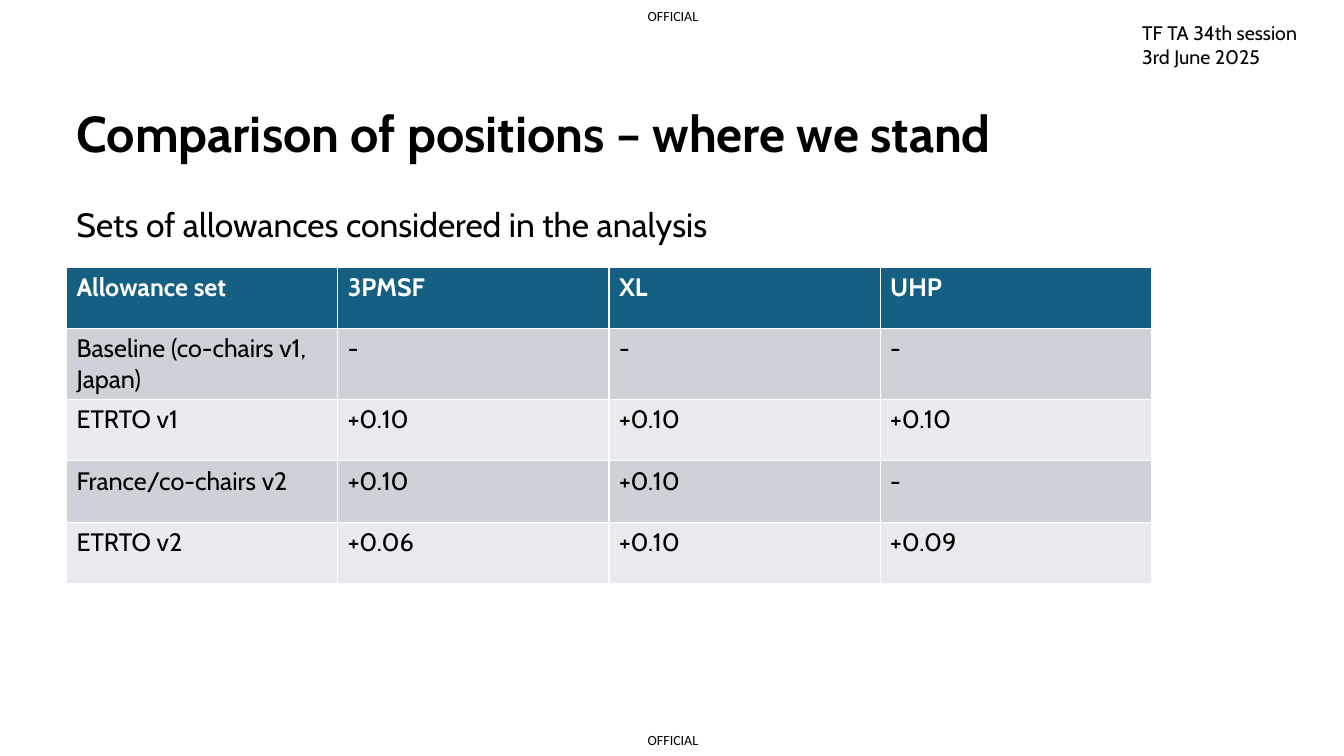
"""Build the slide that compares tyre allowance positions."""
from pptx import Presentation
from pptx.dml.color import RGBColor
from pptx.enum.text import MSO_ANCHOR, MSO_AUTO_SIZE, PP_ALIGN
from pptx.util import Inches, Pt

TOP = MSO_ANCHOR.TOP
NO_FIT = MSO_AUTO_SIZE.NONE
LEFT = PP_ALIGN.LEFT
CENTER = PP_ALIGN.CENTER
TITLE_ONLY = 5

COLORS = {
    "text": "000000",
    "header_text": "FFFFFF",
    "header": "156082",
    "odd_row": "CCD2D8",
    "even_row": "E8EAED",
}
TITLE_FONT = {"name": "Cabin", "size": Pt(36), "bold": True}
SUBTITLE_FONT = {"name": "Cabin", "size": Pt(24), "bold": False}
SESSION_FONT = {"name": "Cabin", "size": Pt(14), "bold": False}
MARKING_FONT = {"name": "Calibri", "size": Pt(10), "bold": False}
HEADER_FONT = {"name": "Cabin", "size": Pt(18), "bold": True}
CELL_FONT = {**HEADER_FONT, "bold": False}

ALLOWANCES = [
    ["Allowance set", "3PMSF", "XL", "UHP"],
    ["Baseline (co-chairs v1, Japan)", "-", "-", "-"],
    ["ETRTO v1", "+0.10", "+0.10", "+0.10"],
    ["France/co-chairs v2", "+0.10", "+0.10", "-"],
    ["ETRTO v2", "+0.06", "+0.10", "+0.09"],
]
COLUMN_WIDTH = 2.69
ROW_HEIGHT = 0.61


def write(frame, lines, font_format, color="text", align=LEFT):
    """Fill a text frame with formatted lines."""
    frame.text = "\n".join(lines)
    for paragraph in frame.paragraphs:
        paragraph.alignment = align
        for attribute, value in font_format.items():
            setattr(paragraph.font, attribute, value)
        paragraph.font.color.rgb = RGBColor.from_string(COLORS[color])


def add_title(slide, text):
    """Move the title placeholder into place and fill it."""
    title = slide.shapes.title
    title.left, title.top = Inches(0.66), Inches(0.96)
    title.width, title.height = Inches(11.61), Inches(0.75)
    title.text_frame.auto_size = NO_FIT
    title.text_frame.vertical_anchor = TOP
    write(title.text_frame, [text], TITLE_FONT)


def add_label(slide, box, lines, font_format):
    """Add a wrapping, left-aligned text box."""
    label = slide.shapes.add_textbox(*map(Inches, box))
    label.text_frame.word_wrap = True
    write(label.text_frame, lines, font_format)


def add_marking(slide, top):
    """Add a centred classification marking without margins."""
    marking = slide.shapes.add_textbox(
        Inches(6.41), Inches(top), Inches(0.53), Inches(0.17))
    frame = marking.text_frame
    for side in ("left", "top", "right", "bottom"):
        setattr(frame, f"margin_{side}", 0)
    write(frame, ["OFFICIAL"], MARKING_FONT, align=CENTER)


def add_allowance_table(slide, rows):
    """Add the allowance table with a header and alternating rows."""
    columns = len(rows[0])
    table = slide.shapes.add_table(
        len(rows), columns, Inches(0.66), Inches(2.65),
        Inches(COLUMN_WIDTH * columns), Inches(ROW_HEIGHT * len(rows))).table
    for row_number, values in enumerate(rows):
        if row_number == 0:
            fill, font_format, color = "header", HEADER_FONT, "header_text"
        else:
            fill = "odd_row" if row_number % 2 else "even_row"
            font_format, color = CELL_FONT, "text"
        for column_number, value in enumerate(values):
            cell = table.cell(row_number, column_number)
            cell.fill.solid()
            cell.fill.fore_color.rgb = RGBColor.from_string(COLORS[fill])
            write(cell.text_frame, [value], font_format, color)


def main():
    """Build and save the slide."""
    presentation = Presentation()
    presentation.slide_width = Inches(13.33)
    presentation.slide_height = Inches(7.5)
    slide = presentation.slides.add_slide(
        presentation.slide_layouts[TITLE_ONLY])
    for marking_top in (0.07, 7.26):
        add_marking(slide, marking_top)
    add_title(slide, "Comparison of positions – where we stand")
    add_label(slide, (0.66, 1.97, 11.61, 0.5),
              ["Sets of allowances considered in the analysis"], SUBTITLE_FONT)
    add_allowance_table(slide, ALLOWANCES)
    add_label(slide, (11.23, 0.16, 2.1, 0.57),
              ["TF TA 34th session", "3rd June 2025"], SESSION_FONT)
    presentation.save("out.pptx")


if __name__ == "__main__":
    main()
